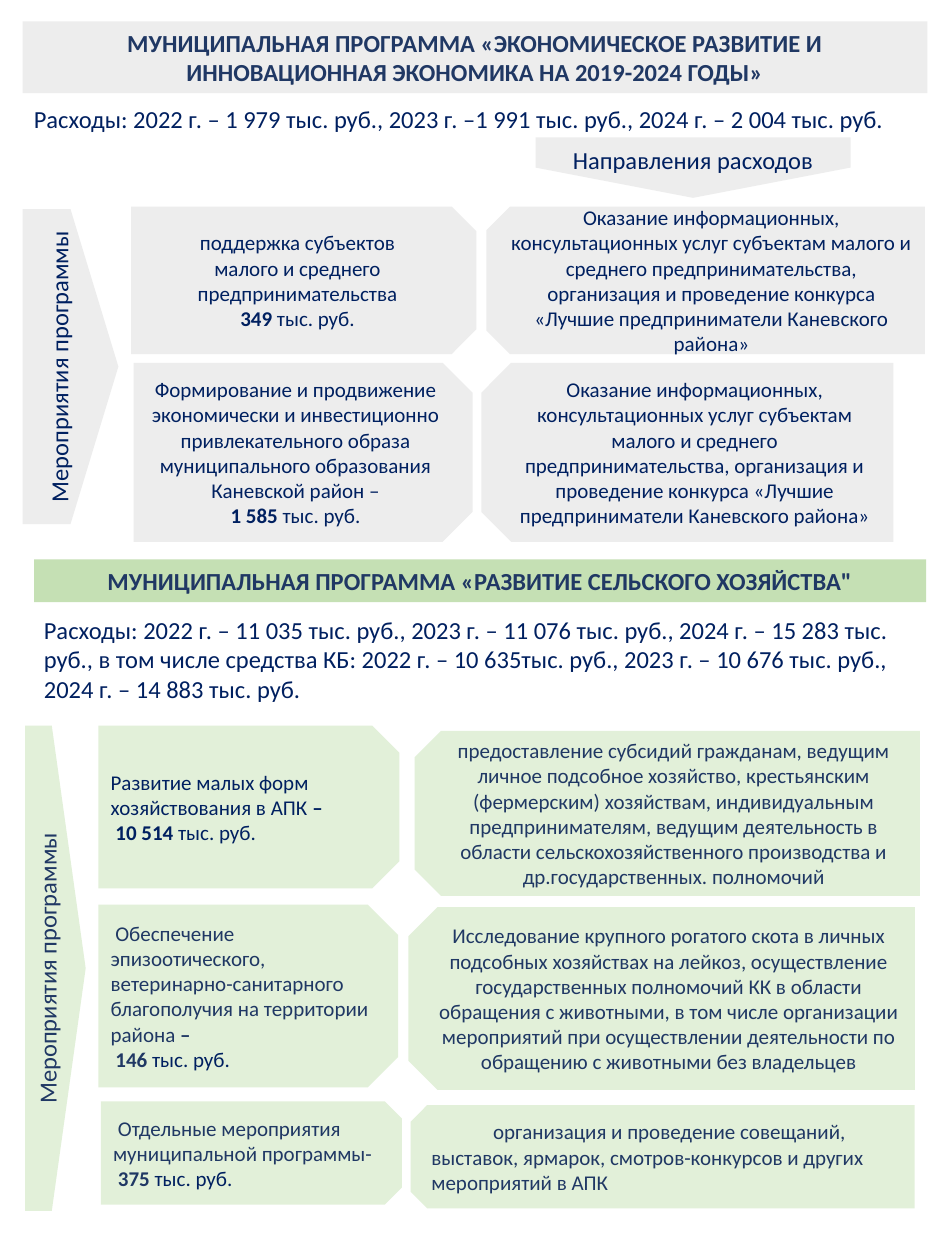
from pptx import Presentation
from pptx.dml.color import RGBColor
from pptx.enum.shapes import MSO_SHAPE
from pptx.enum.text import MSO_ANCHOR, MSO_AUTO_SIZE, PP_ALIGN
from pptx.util import Emu, Pt

PX = 9144
COLORS = {"gray": "EDEDED", "green": "C5E0B4", "mint": "E2F0D9",
          "navy": "002060", "blue": "203864"}
SIDE = "Мероприятия программы"
SNIP = MSO_SHAPE.SNIP_2_SAME_RECTANGLE
ARROW = MSO_SHAPE.PENTAGON


def rgb(name):
    return RGBColor.from_string(COLORS[name])


def px(*values):
    return [Emu(round(v * PX)) for v in values]


def write(tf, lines, size, color, align=PP_ALIGN.CENTER, bold=False):
    tf.word_wrap = True
    for i, line in enumerate(lines):
        p = tf.paragraphs[0] if i == 0 else tf.add_paragraph()
        p.alignment = align
        for j, part in enumerate(line.split("*")):
            if not part:
                continue
            r = p.add_run()
            r.text = part
            r.font.name = "Calibri"
            r.font.size = Pt(size)
            r.font.bold = bold or j % 2 == 1
            r.font.color.rgb = rgb("navy" if j > 1 else color)


def paint(sp, fill):
    sp.fill.solid()
    sp.fill.fore_color.rgb = rgb(fill)


def add_block(s, kind, box, fill, adj=None):
    sp = s.shapes.add_shape(kind, *px(*box))
    sp.shadow.inherit = False
    paint(sp, fill)
    sp.line.fill.background()
    for i, value in enumerate(adj or []):
        sp.adjustments[i] = value
    sp.text_frame.vertical_anchor = MSO_ANCHOR.MIDDLE
    return sp


def set_vert(sp, vert):
    sp.element.txBody.bodyPr.set("vert", vert)


def add_turned(s, kind, box, angle, fill, lines, size, color,
               align=PP_ALIGN.CENTER, adj=None):
    x, y, w, h = box
    shift = (w - h) / 2
    sp = add_block(s, kind, (x + shift, y - shift, h, w), fill, adj)
    sp.rotation = angle
    set_vert(sp, "vert270" if angle == 90 else "vert")
    write(sp.text_frame, lines, size, color, align)
    return sp


def add_side_arrow(s, box, fill, color, adj=None):
    sp = add_block(s, ARROW, box, fill, adj)
    set_vert(sp, "vert270")
    write(sp.text_frame, [SIDE], 14, color)


def add_title(s, box, text):
    sp = s.shapes.title
    sp.left, sp.top, sp.width, sp.height = px(*box)
    paint(sp, "gray")
    tf = sp.text_frame
    tf.auto_size = MSO_AUTO_SIZE.NONE
    tf.vertical_anchor = MSO_ANCHOR.TOP
    write(tf, [text], 14, "blue", bold=True)


def add_heading(s, box, text):
    sp = add_block(s, MSO_SHAPE.RECTANGLE, box, "green")
    sp.text_frame.vertical_anchor = MSO_ANCHOR.TOP
    write(sp.text_frame, [text], 14, "blue", bold=True)


def add_costs(s, box, text):
    sp = s.shapes.add_textbox(*px(*box))
    write(sp.text_frame, [text], 14, "navy", PP_ALIGN.LEFT)


def add_business(s):
    add_title(s, (18, 17, 718, 57),
              "МУНИЦИПАЛЬНАЯ ПРОГРАММА «ЭКОНОМИЧЕСКОЕ РАЗВИТИЕ И "
              "ИННОВАЦИОННАЯ ЭКОНОМИКА НА 2019-2024 ГОДЫ»")
    add_costs(s, (17, 78, 714, 34),
              "Расходы: 2022 г. – 1 979 тыс. руб., 2023 г. –1 991 тыс. руб., "
              "2024 г. – 2 004 тыс. руб.")
    add_turned(s, ARROW, (425, 109, 250, 48), 90, "gray",
               ["Направления расходов"], 14, "navy")
    add_side_arrow(s, (18, 166, 76, 250), "gray", "navy")
    services = ("Оказание информационных, консультационных услуг субъектам "
                "малого и среднего предпринимательства, организация и "
                "проведение конкурса «Лучшие предприниматели Каневского района»")
    blocks = [
        ((104, 164, 274, 117), 90, None,
         ["поддержка субъектов", "малого и среднего предпринимательства",
          "*349 *тыс. руб."]),
        ((106, 288, 269, 142), 90, None,
         ["Формирование и продвижение экономически и инвестиционно "
          "привлекательного образа муниципального образования "
          "Каневской район –", "*1 585 *тыс. руб."]),
        ((386, 164, 348, 117), 270, [0.16, 0], [services]),
        ((382, 288, 327, 142), 270, None, [services]),
    ]
    for box, angle, adj, lines in blocks:
        add_turned(s, SNIP, box, angle, "gray", lines, 12, "navy", adj=adj)


def add_farming(s):
    add_heading(s, (27, 444, 708, 34),
                "МУНИЦИПАЛЬНАЯ ПРОГРАММА «РАЗВИТИЕ СЕЛЬСКОГО ХОЗЯЙСТВА\"")
    add_costs(s, (25, 483, 710, 81),
              "Расходы: 2022 г. – 11 035 тыс. руб., 2023 г. – 11 076 тыс. руб., "
              "2024 г. – 15 283 тыс. руб., в том числе средства КБ: "
              "2022 г. – 10 635тыс. руб., 2023 г. – 10 676 тыс. руб., "
              "2024 г. – 14 883 тыс. руб.")
    add_side_arrow(s, (20, 576, 48, 385), "mint", "blue", [0.56])
    measures = [
        ((78, 576, 239, 129), "navy",
         ["Развитие малых форм хозяйствования в АПК *–*",
          "* 10 514 *тыс. руб."]),
        ((78, 718, 238, 145), "blue",
         [" Обеспечение эпизоотического, ветеринарно-санитарного "
          "благополучия на территории района *–*", "* 146 *тыс. руб."]),
        ((80, 874, 239, 82), "blue",
         [" Отдельные мероприятия муниципальной программы-",
          " *375 *тыс. руб."]),
    ]
    for box, color, lines in measures:
        add_turned(s, SNIP, box, 90, "mint", lines, 12, color, PP_ALIGN.LEFT)
    directions = [
        ((329, 580, 401, 131), PP_ALIGN.CENTER,
         "предоставление субсидий гражданам, ведущим личное подсобное "
         "хозяйство, крестьянским (фермерским) хозяйствам, индивидуальным "
         "предпринимателям, ведущим деятельность в области "
         "сельскохозяйственного производства и др.государственных. полномочий"),
        ((324, 720, 402, 145), PP_ALIGN.CENTER,
         "Исследование крупного рогатого скота в личных подсобных хозяйствах "
         "на лейкоз, осуществление государственных полномочий КК в области "
         "обращения с животными, в том числе организации мероприятий при "
         "осуществлении деятельности по обращению с животными без владельцев"),
        ((326, 877, 400, 82), PP_ALIGN.LEFT,
         "организация и проведение совещаний, выставок, ярмарок, "
         "смотров-конкурсов и других мероприятий в АПК"),
    ]
    for box, align, text in directions:
        sp = add_turned(s, SNIP, box, 270, "mint", [text], 12, "blue", align,
                        [0.16, 0])
        if align == PP_ALIGN.LEFT:
            pPr = sp.text_frame.paragraphs[0]._p.get_or_add_pPr()
            pPr.set("indent", str(49 * PX))


def main():
    prs = Presentation()
    prs.slide_width, prs.slide_height = px(750, 1000)
    s = prs.slides.add_slide(prs.slide_layouts[5])
    add_business(s)
    add_farming(s)
    prs.save("out.pptx")


if __name__ == "__main__":
    main()
